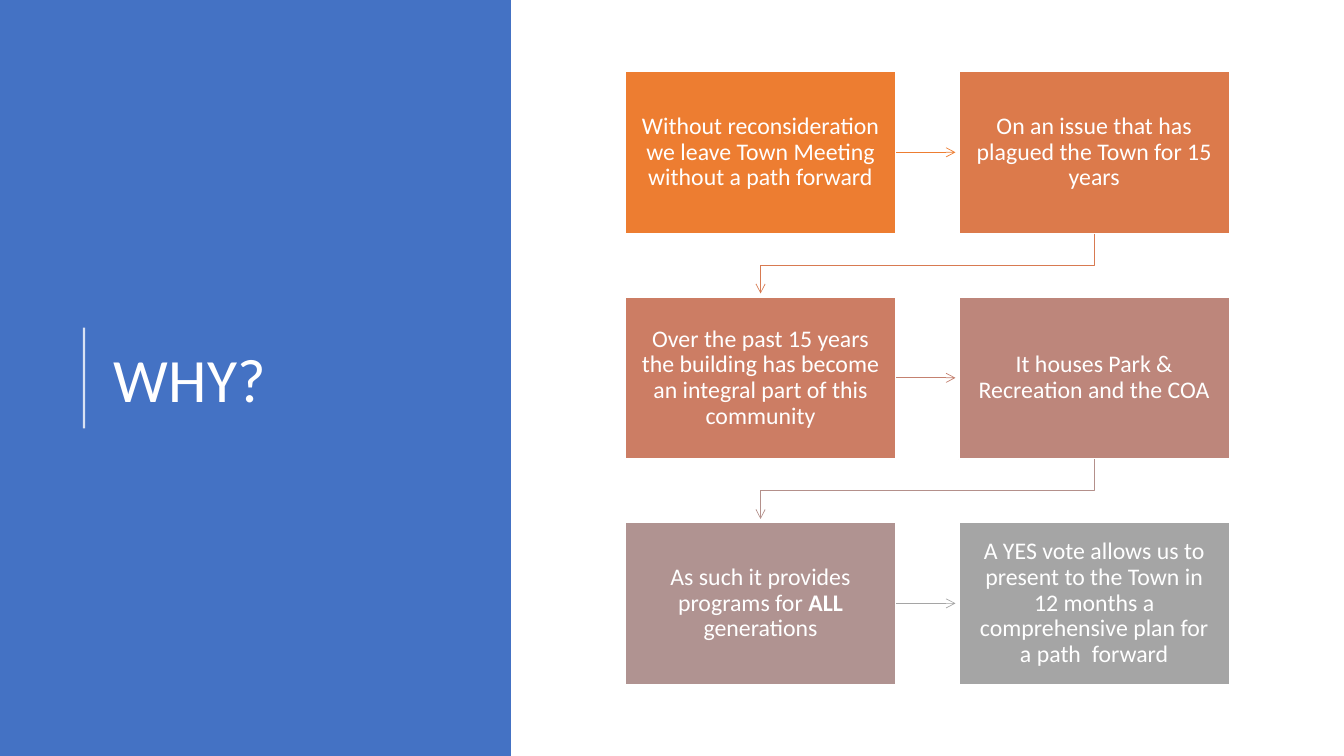
from lxml.etree import SubElement as Sub
from pptx import Presentation
from pptx.dml.color import RGBColor as RGB
from pptx.enum.shapes import MSO_CONNECTOR as LINK, MSO_SHAPE as KIND
from pptx.enum.text import MSO_ANCHOR as ANCHOR, MSO_AUTO_SIZE as FIT, PP_ALIGN as ALIGN
from pptx.oxml.ns import qn
from pptx.util import Pt

HUES = {
    "panel": "4472C4", "white": "FFFFFF",
    "box1": "ED7D31", "box2": "DC7A4B", "box3": "CC7D64",
    "box4": "BD867B", "box5": "B09391", "box6": "A5A5A5",
    "link1": "ED7D31", "link2": "D87A51", "link3": "C48170",
    "link4": "B4908B", "link5": "A5A5A5",
}
STEPS = [
    "Without reconsideration we leave Town Meeting without a path forward",
    "On an issue that has plagued the Town for 15 years",
    "Over the past 15 years the building has become an integral part of this community",
    "It houses Park & Recreation and the COA",
    "As such it provides programs for **ALL** generations",
    "A YES vote allows us to present to the Town in 12 months a comprehensive plan for a path  forward",
]
LEFT, TOP = 446.4, 50.7
WIDE, HIGH = 193.7, 116.2
STEP_X, STEP_Y = 238.3, 161.1
GAP = 2.2


def hue(name):
    """Return the named colour."""
    return RGB.from_string(HUES[name])


def stroke(shape, name, width):
    """Give a shape a plain line and return the line's XML."""
    shape.line.color.rgb = hue(name)
    shape.line.width = Pt(width)
    return shape.element.spPr.find(qn("a:ln"))


def style(para, size, align):
    """Set the font and the layout of a paragraph."""
    para.alignment = align
    para.line_spacing = 0.9
    para.font.name = "Calibri"
    para.font.size = Pt(size)
    para.font.color.rgb = hue("white")


def add_rect(slide, x, y, w, h, name):
    """Add a filled rectangle without shadow."""
    rect = slide.shapes.add_shape(KIND.RECTANGLE, Pt(x), Pt(y), Pt(w), Pt(h))
    rect.shadow.inherit = False
    rect.fill.solid()
    rect.fill.fore_color.rgb = hue(name)
    rect.line.fill.background()
    return rect


def add_line(slide, start, end, name, width):
    """Add a straight line without shadow and return it with its line XML."""
    line = slide.shapes.add_connector(LINK.STRAIGHT, *map(Pt, start + end))
    ln = stroke(line, name, width)
    Sub(line.element.spPr, qn("a:effectLst"))
    return line, ln


def add_head(ln):
    """Put an open arrowhead at the end of a line."""
    Sub(ln, qn("a:tailEnd"), type="arrow")


def add_title(slide, text):
    """Move the title onto the panel and fill it."""
    title = slide.shapes.title
    slide.shapes.element.append(title.element)
    title.left, title.top, title.width, title.height = map(Pt, (74.2, 56.2, 265.7, 433.4))
    frame = title.text_frame
    frame.text = text
    frame.auto_size = FIT.NONE
    frame.vertical_anchor = ANCHOR.MIDDLE
    style(frame.paragraphs[0], 44, ALIGN.LEFT)


def add_step(slide, x, y, text, name):
    """Add a step box, with the text between double stars in bold."""
    box = add_rect(slide, x, y, WIDE, HIGH, name)
    stroke(box, "white", 1.5)
    frame = box.text_frame
    frame.word_wrap = True
    frame.vertical_anchor = ANCHOR.MIDDLE
    frame.margin_left = frame.margin_right = Pt(9.4)
    frame.margin_top = frame.margin_bottom = Pt(10)
    para = frame.paragraphs[0]
    style(para, 17, ALIGN.CENTER)
    for i, part in enumerate(text.split("**")):
        run = para.add_run()
        run.text = part
        if i % 2:
            run.font.bold = True
    return box


def add_arrow(slide, box, x, y, name):
    """Add the arrow from a left box to its right neighbour."""
    mid = y + HIGH / 2
    line, ln = add_line(slide, (x + WIDE, mid), (x + STEP_X - GAP, mid), name, 0.5)
    line.begin_connect(box, 3)
    add_head(ln)


def add_bend(slide, x, y, name):
    """Add the bent arrow from a right box to the next row."""
    low, end = y + HIGH, y + STEP_Y - GAP
    mid, left = (y + HIGH + y + STEP_Y) / 2, x - STEP_X + WIDE / 2
    start, *rest = [(Pt(a), Pt(b)) for a, b in
                    [(x + WIDE / 2, low), (x + WIDE / 2, mid), (left, mid), (left, end)]]
    form = slide.shapes.build_freeform(*start)
    form.add_line_segments(rest, close=False)
    bend = form.convert_to_shape()
    bend.shadow.inherit = False
    bend.fill.background()
    add_head(stroke(bend, name, 0.5))


def main():
    """Build the slide and save it."""
    deck = Presentation()
    deck.slide_width, deck.slide_height = Pt(960), Pt(540)
    slide = deck.slides.add_slide(deck.slide_layouts[5])
    add_rect(slide, 0, 0, 365, 540, "panel")
    rule, ln = add_line(slide, (60, 306), (60, 234), "white", 1.5)
    Sub(ln.find(".//" + qn("a:srgbClr")), qn("a:alpha"), val="80000")
    add_title(slide, "WHY?")
    for i, text in enumerate(STEPS):
        x, y = LEFT + i % 2 * STEP_X, TOP + i // 2 * STEP_Y
        box = add_step(slide, x, y, text, f"box{i + 1}")
        if i % 2 == 0:
            add_arrow(slide, box, x, y, f"link{i + 1}")
        elif i < len(STEPS) - 1:
            add_bend(slide, x, y, f"link{i + 1}")
    deck.save("out.pptx")


if __name__ == "__main__":
    main()
